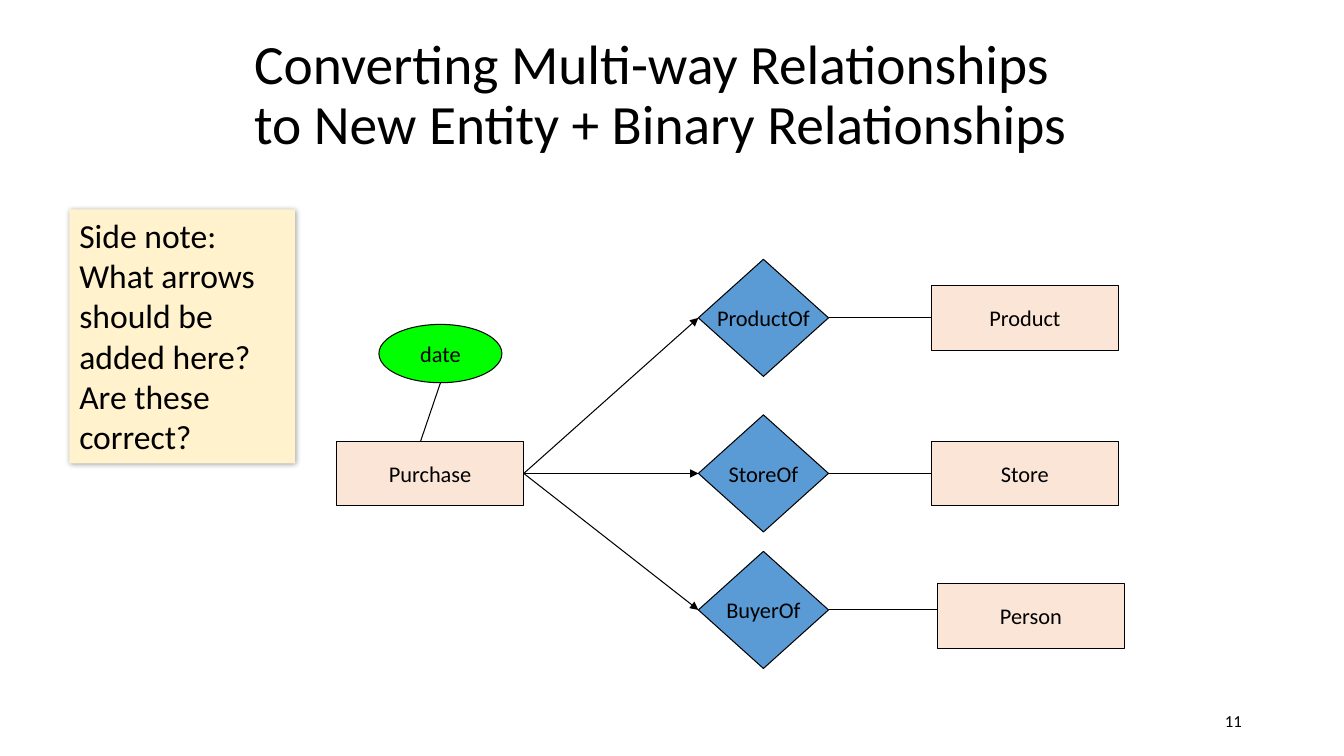
import pptx
import pptx.dml.color
import pptx.enum.shapes
import pptx.enum.text
import pptx.oxml
import pptx.oxml.ns
import pptx.util
from pptx.util import Cm, Pt

RGBColor = pptx.dml.color.RGBColor
MSO_SHAPE = pptx.enum.shapes.MSO_SHAPE
PP_ALIGN = pptx.enum.text.PP_ALIGN
MSO_ANCHOR = pptx.enum.text.MSO_ANCHOR

BLACK = RGBColor(0x00, 0x00, 0x00)
PEACH = RGBColor(0xFB, 0xE5, 0xD6)
BLUE = RGBColor(0x5B, 0x9B, 0xD5)
GREEN = RGBColor(0x00, 0xFF, 0x00)
CREAM = RGBColor(0xFF, 0xF2, 0xCC)
FONT = "Calibri"

TITLE = "Converting Multi-way Relationships to New Entity + Binary Relationships"
NOTE = "Side note: What arrows should be added here? Are these correct?"
SLIDE_NUMBER = "11"

# relationship, its centre height, entity, entity left, entity centre height (cm)
RELATIONSHIPS = [
    ("ProductOf", 8.01, "Product", 23.47, 8.01),
    ("StoreOf", 11.93, "Store", 23.47, 11.93),
    ("BuyerOf", 15.37, "Person", 23.62, 15.52),
]
PURCHASE_LEFT, PURCHASE_MIDDLE = 8.48, 11.93
DATE_LEFT, DATE_MIDDLE = 9.55, 8.91
DIAMOND_LEFT = 17.6
ENTITY_SIZE = (4.72, 1.63)
DIAMOND_SIZE = (3.28, 2.95)
DATE_SIZE = (3.1, 1.47)
TOP, LEFT, BOTTOM, RIGHT = range(4)
NS = 'xmlns:a="http://schemas.openxmlformats.org/drawingml/2006/main"'


def set_text(shape, text, size, alignment, anchor, wrap=True):
    frame = shape.text_frame
    frame.text = text
    frame.word_wrap = wrap
    frame.vertical_anchor = anchor
    paragraph = frame.paragraphs[0]
    paragraph.alignment = alignment
    paragraph.font.name = FONT
    paragraph.font.size = Pt(size)
    paragraph.font.color.rgb = BLACK
    return paragraph


def add_node(slide, kind, text, left, middle, size, color):
    """Add a labelled diagram shape centred vertically on middle."""
    width, height = size
    shape = slide.shapes.add_shape(
        kind, Cm(left), Cm(middle - height / 2), Cm(width), Cm(height))
    shape.shadow.inherit = False
    shape.fill.solid()
    shape.fill.fore_color.rgb = color
    shape.line.color.rgb = BLACK
    shape.line.width = Pt(0.75)
    set_text(shape, text, 16, PP_ALIGN.CENTER, MSO_ANCHOR.MIDDLE, wrap=False)
    return shape


def add_line(slide, start, end, arrow=False):
    """Draw a line; each end is an (x, y) in cm or a (shape, side) pair."""
    connector = slide.shapes.add_connector(
        pptx.enum.shapes.MSO_CONNECTOR.STRAIGHT, 0, 0, 0, 0)
    if isinstance(start[0], float):
        connector.begin_x, connector.begin_y = Cm(start[0]), Cm(start[1])
    else:
        connector.begin_connect(*start)
    if isinstance(end[0], float):
        connector.end_x, connector.end_y = Cm(end[0]), Cm(end[1])
    else:
        connector.end_connect(*end)
    connector.line.color.rgb = BLACK
    connector.line.width = Pt(0.75)
    if arrow:
        connector.line._get_or_add_ln().append(
            pptx.oxml.parse_xml(f'<a:tailEnd {NS} type="triangle"/>'))
    properties = connector._element.spPr
    properties.append(pptx.oxml.parse_xml(f"<a:effectLst {NS}/>"))


def add_diagram(slide):
    purchase = add_node(slide, MSO_SHAPE.RECTANGLE, "Purchase",
                        PURCHASE_LEFT, PURCHASE_MIDDLE, ENTITY_SIZE, PEACH)
    add_node(slide, MSO_SHAPE.OVAL, "date", DATE_LEFT, DATE_MIDDLE, DATE_SIZE, GREEN)
    add_line(slide, (10.6, PURCHASE_MIDDLE - ENTITY_SIZE[1] / 2),
             (DATE_LEFT + DATE_SIZE[0] / 2, DATE_MIDDLE + DATE_SIZE[1] / 2))
    for relationship, middle, entity, entity_left, entity_middle in RELATIONSHIPS:
        diamond = add_node(slide, MSO_SHAPE.DIAMOND, relationship,
                           DIAMOND_LEFT, middle, DIAMOND_SIZE, BLUE)
        box = add_node(slide, MSO_SHAPE.RECTANGLE, entity,
                       entity_left, entity_middle, ENTITY_SIZE, PEACH)
        level = middle == entity_middle
        add_line(slide, (diamond, RIGHT), (box, LEFT) if level else (entity_left, middle))
        add_line(slide, (purchase, RIGHT), (diamond, LEFT), arrow=True)


def add_note(slide):
    note = slide.shapes.add_shape(
        MSO_SHAPE.RECTANGLE, Cm(1.75), Cm(5.28), Cm(5.69), Cm(6.4))
    note.fill.solid()
    note.fill.fore_color.rgb = CREAM
    note.line.fill.background()
    note._element.spPr.append(pptx.oxml.parse_xml(
        f'<a:effectLst {NS}><a:outerShdw blurRad="{Pt(4)}" dist="{Pt(1)}" '
        'dir="2700000" algn="tl" rotWithShape="0"><a:srgbClr val="000000">'
        '<a:alpha val="40000"/></a:srgbClr></a:outerShdw></a:effectLst>'))
    set_text(note, NOTE, 24, PP_ALIGN.LEFT, MSO_ANCHOR.TOP)
    note.text_frame.auto_size = pptx.enum.text.MSO_AUTO_SIZE.SHAPE_TO_FIT_TEXT


def main():
    presentation = pptx.Presentation()
    presentation.slide_width, presentation.slide_height = Cm(33.87), Cm(19.05)
    slide = presentation.slides.add_slide(presentation.slide_layouts[5])

    title = slide.shapes.title
    title.left, title.top, title.width, title.height = Cm(6.15), Cm(0.84), Cm(21.59), Cm(3.18)
    paragraph = set_text(title, TITLE, 39.6, PP_ALIGN.LEFT, MSO_ANCHOR.MIDDLE)
    paragraph.line_spacing = 0.9
    title.text_frame.auto_size = pptx.enum.text.MSO_AUTO_SIZE.NONE

    number = slide.shapes.add_textbox(Cm(23.93), Cm(17.65), Cm(7.62), Cm(1.02))
    set_text(number, SLIDE_NUMBER, 12, PP_ALIGN.RIGHT, MSO_ANCHOR.MIDDLE)

    add_diagram(slide)
    add_note(slide)
    presentation.save("out.pptx")


if __name__ == "__main__":
    main()
